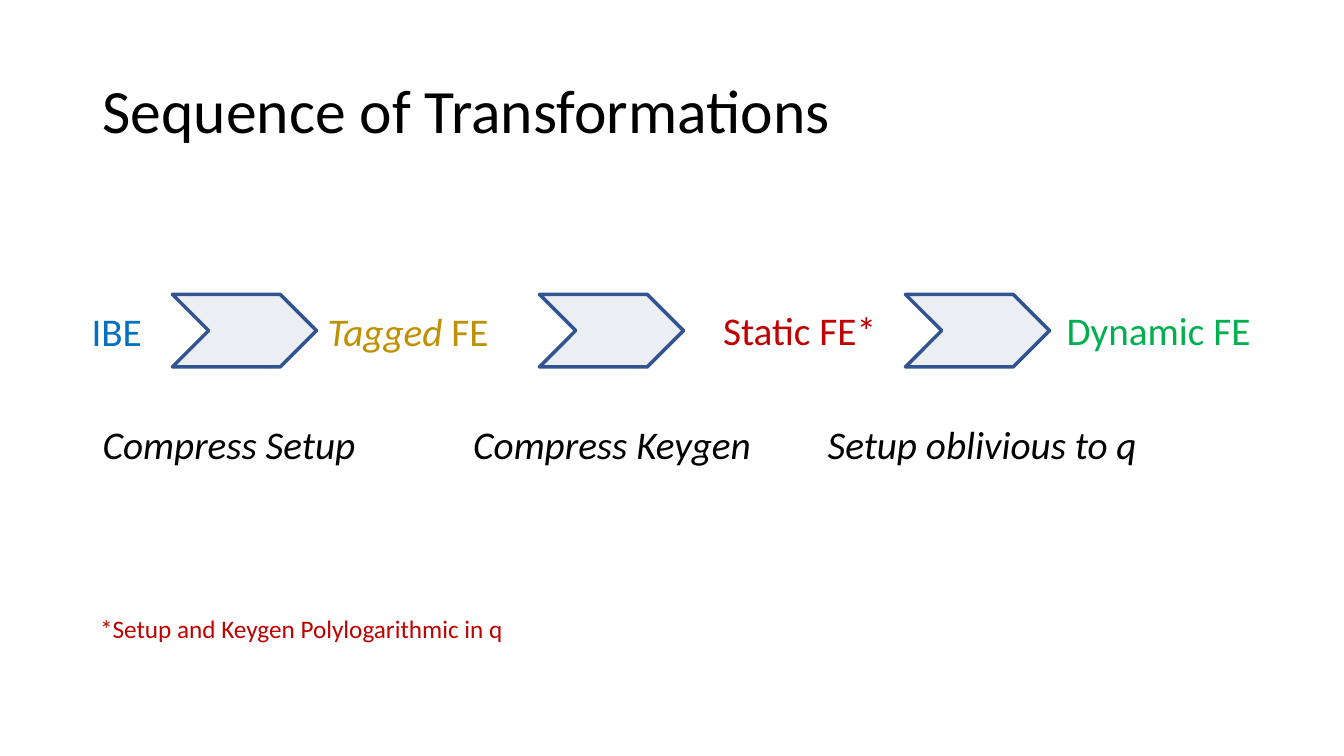
from dataclasses import dataclass

import pptx
import pptx.util
import pptx.dml.color
import pptx.enum.shapes
import pptx.enum.text
import pptx.oxml.ns
import lxml.etree

Inches = pptx.util.Inches
RGBColor = pptx.dml.color.RGBColor
Align = pptx.enum.text.PP_ALIGN
Anchor = pptx.enum.text.MSO_ANCHOR
AutoSize = pptx.enum.text.MSO_AUTO_SIZE

BLACK = RGBColor(0x00, 0x00, 0x00)
BLUE = RGBColor(0x00, 0x70, 0xC0)
GOLD = RGBColor(0xBF, 0x90, 0x00)
RED = RGBColor(0xC0, 0x00, 0x00)
GREEN = RGBColor(0x00, 0xB0, 0x50)
CHEVRON_FILL = RGBColor(0xD6, 0xDC, 0xE5)
CHEVRON_LINE = RGBColor(0x32, 0x54, 0x91)

FONT = "Calibri"
CHEVRON_TOP, CHEVRON_WIDTH, CHEVRON_HEIGHT = 2.92, 1.43, 0.72
CHEVRON_LEFTS = (1.71, 5.35, 8.98)
LABEL_HEIGHT = 0.57
STEP_TOP = 4.12


@dataclass(frozen=True)
class Label:
    text: str
    left: float
    top: float
    width: float
    color: RGBColor = BLACK
    italic_lead: str = ""
    align: Align = Align.LEFT
    wrap: bool = False


STAGES = (
    Label("IBE", 0.81, 3.0, 0.71, BLUE),
    Label(" FE", 3.15, 3.0, 1.81, GOLD, italic_lead="Tagged"),
    Label("Static FE*", 7.06, 2.99, 1.74, RED, align=Align.CENTER),
    Label("Dynamic FE", 10.48, 2.99, 2.05, GREEN),
)
STEPS = (
    Label("", 0.92, STEP_TOP, 2.73, italic_lead="Compress Setup"),
    Label("", 4.58, STEP_TOP, 2.98, italic_lead="Compress Keygen", align=Align.CENTER),
    Label("", 8.11, STEP_TOP, 3.6, italic_lead="Setup oblivious to q", wrap=True),
)


def add_text(s, text: str, left: float, top: float, width: float, height: float, *,
             size: float = 28, color: RGBColor = BLACK, italic_lead: str = "",
             align: Align = Align.LEFT, anchor: Anchor = Anchor.TOP,
             wrap: bool = False, grow: bool = True, spacing: float = 1.0) -> None:
    sp = s.shapes.add_textbox(Inches(left), Inches(top), Inches(width), Inches(height))
    tf = sp.text_frame
    tf.word_wrap = wrap
    tf.auto_size = AutoSize.SHAPE_TO_FIT_TEXT if grow else AutoSize.NONE
    tf.vertical_anchor = anchor
    p = tf.paragraphs[0]
    p.alignment = align
    p.line_spacing = spacing
    for part, italic in ((italic_lead, True), (text, False)):
        if part:
            r = p.add_run()
            r.text = part
            r.font.name = FONT
            r.font.size = pptx.util.Pt(size)
            r.font.italic = italic
            r.font.color.rgb = color


def add_chevron(s, left: float) -> None:
    sp = s.shapes.add_shape(
        pptx.enum.shapes.MSO_SHAPE.CHEVRON, Inches(left), Inches(CHEVRON_TOP),
        Inches(CHEVRON_WIDTH), Inches(CHEVRON_HEIGHT))
    sp.shadow.inherit = False
    sp.fill.solid()
    sp.fill.fore_color.rgb = CHEVRON_FILL
    qn = pptx.oxml.ns.qn
    color = sp.fill._xPr.find(qn("a:solidFill")).find(qn("a:srgbClr"))
    lxml.etree.SubElement(color, qn("a:alpha"), val="47000")
    sp.line.color.rgb = CHEVRON_LINE
    sp.line.width = pptx.util.Pt(2.5)


def main() -> None:
    prs = pptx.Presentation()
    prs.slide_width = Inches(13.33)
    prs.slide_height = Inches(7.5)
    s = prs.slides.add_slide(prs.slide_layouts[6])

    add_text(s, "Sequence of Transformations", 0.92, 0.4, 11.5, 1.45, size=44,
             anchor=Anchor.MIDDLE, wrap=True, grow=False, spacing=0.9)
    for left in CHEVRON_LEFTS:
        add_chevron(s, left)
    for label in STAGES + STEPS:
        add_text(s, label.text, label.left, label.top, label.width, LABEL_HEIGHT,
                 color=label.color, italic_lead=label.italic_lead,
                 align=label.align, wrap=label.wrap)
    add_text(s, "*Setup and Keygen Polylogarithmic in q", 0.87, 6.04, 4.24, 0.4,
             size=18, color=RED, align=Align.CENTER)

    prs.save("out.pptx")


if __name__ == "__main__":
    main()
